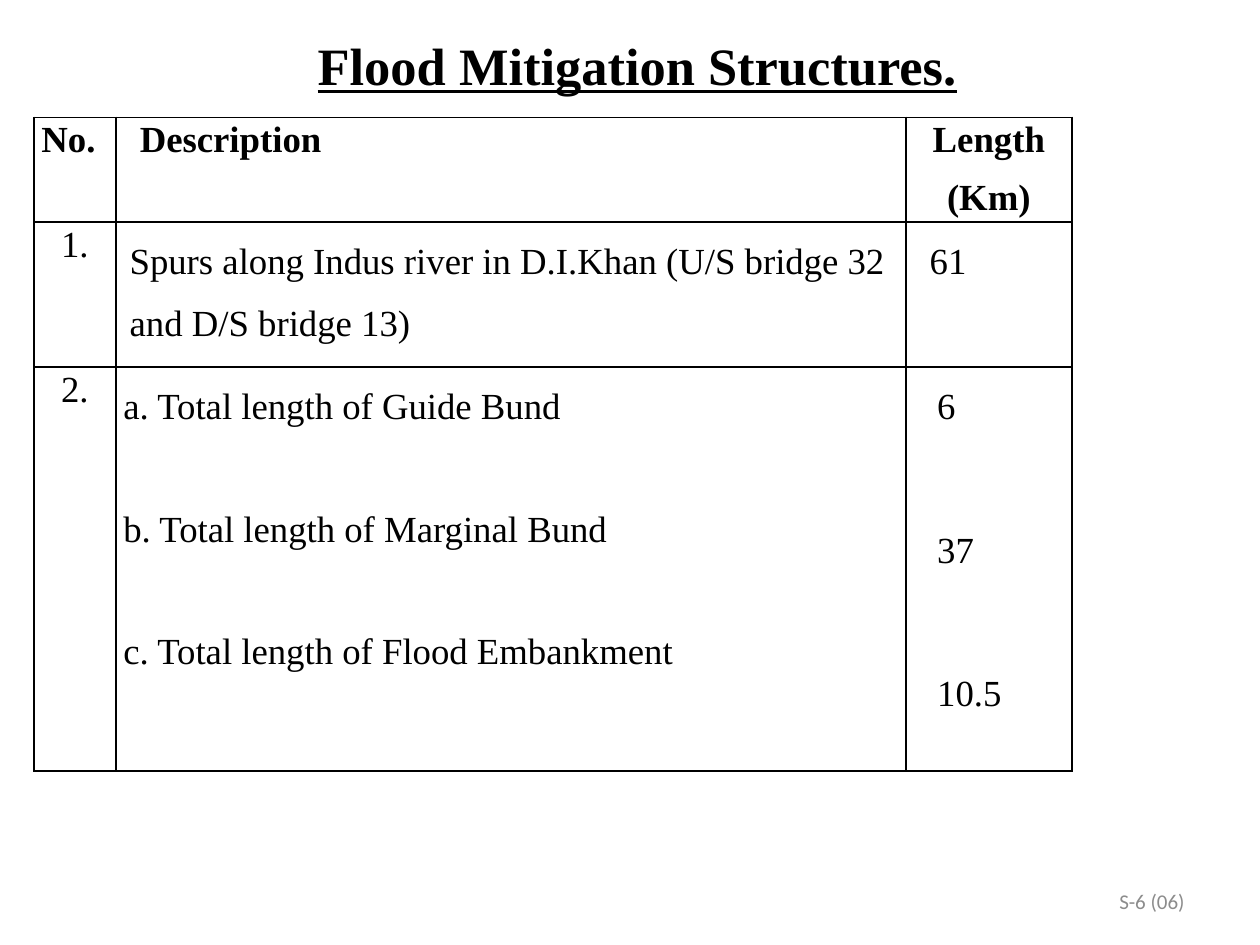
from lxml import etree
from pptx import Presentation
from pptx.dml.color import RGBColor
from pptx.enum.text import MSO_ANCHOR, PP_ALIGN
from pptx.oxml.ns import qn
from pptx.util import Pt

LEFT, CENTER, RIGHT = PP_ALIGN.LEFT, PP_ALIGN.CENTER, PP_ALIGN.RIGHT
JUSTIFY = PP_ALIGN.JUSTIFY
MIDDLE = MSO_ANCHOR.MIDDLE
SERIF, SANS = "Times New Roman", "Calibri"
BLACK, GRAY = "000000", "8C8C8C"

TITLE = "Flood Mitigation Structures."
PAGE_LABEL = "S-6 (06)"
TABLE_LEFT, TABLE_TOP = 19.4, 67
COLUMN_WIDTHS = [46.8, 451.4, 95]
ROW_HEIGHTS = [59.8, 82.8, 231.1]

# Each cell: lines, alignment, indent, line spacing, space after
ROWS = [
    [
        (["No."], JUSTIFY, 0, 1.07, 8),
        (["Description"], JUSTIFY, 9.4, 1.07, 8),
        (["Length", "(Km)"], CENTER, 0, 1.07, 8),
    ],
    [
        (["1."], CENTER, 0, 1.07, 6),
        (["Spurs along Indus river in D.I.Khan (U/S bridge 32 and D/S bridge 13)"],
         LEFT, 3.6, 1.5, 6),
        (["61"], JUSTIFY, 9.4, 1.5, 6),
    ],
    [
        (["2."], CENTER, 0, 1.07, 6),
        (["a. Total length of Guide Bund",
          "b. Total length of Marginal Bund",
          "c. Total length of Flood Embankment"], LEFT, 0, 1.5, 35),
        (["6", "37", "10.5"], JUSTIFY, 13.7, 1.5, 47),
    ],
]


def style_font(para, name, size, color, bold=False, underline=False):
    for span in para.runs:
        font = span.font
        font.name, font.size = name, Pt(size)
        font.bold, font.underline = bold, underline
        font.color.rgb = RGBColor.from_string(color)


def add_label(page, text, left, top, width, height, align, **look):
    box = page.shapes.add_textbox(Pt(left), Pt(top), Pt(width), Pt(height))
    frame = box.text_frame
    frame.word_wrap = True
    frame.vertical_anchor = MIDDLE
    frame.text = text
    para = frame.paragraphs[0]
    para.alignment = align
    style_font(para, **look)


def add_borders(cell):
    properties = cell._tc.get_or_add_tcPr()
    for side in ("lnL", "lnR", "lnT", "lnB"):
        line = etree.SubElement(properties, qn(f"a:{side}"), w=str(Pt(1)))
        fill = etree.SubElement(line, qn("a:solidFill"))
        etree.SubElement(fill, qn("a:srgbClr"), val=BLACK)


def fill_cell(cell, lines, align, indent, spacing, after, bold):
    add_borders(cell)
    cell.fill.background()
    cell.margin_left = cell.margin_right = Pt(4.3)
    cell.margin_top = cell.margin_bottom = 0
    cell.text_frame.text = "\n".join(lines)
    for para in cell.text_frame.paragraphs:
        para.alignment = align
        para.line_spacing = spacing
        para.space_after = Pt(after)
        para._p.get_or_add_pPr().set("marL", str(Pt(indent)))
        style_font(para, SERIF, 21, BLACK, bold)


def add_structures_table(page):
    frame = page.shapes.add_table(
        len(ROWS), len(COLUMN_WIDTHS), Pt(TABLE_LEFT), Pt(TABLE_TOP),
        Pt(sum(COLUMN_WIDTHS)), Pt(sum(ROW_HEIGHTS)))
    table = frame.table
    table.first_row = table.horz_banding = False
    for column, width in zip(table.columns, COLUMN_WIDTHS):
        column.width = Pt(width)
    for index, (row, height) in enumerate(zip(table.rows, ROW_HEIGHTS)):
        row.height = Pt(height)
        for cell, content in zip(row.cells, ROWS[index]):
            fill_cell(cell, *content, bold=index == 0)


def main():
    deck = Presentation()
    deck.slide_width, deck.slide_height = Pt(720), Pt(540)
    page = deck.slides.add_slide(deck.slide_layouts[6])
    add_structures_table(page)
    add_label(page, TITLE, 43.2, 16, 642, 42, CENTER,
              name=SERIF, size=30, color=BLACK, bold=True, underline=True)
    add_label(page, PAGE_LABEL, 516, 500.5, 168, 28.8, RIGHT,
              name=SANS, size=12, color=GRAY)
    deck.save("out.pptx")


if __name__ == "__main__":
    main()
